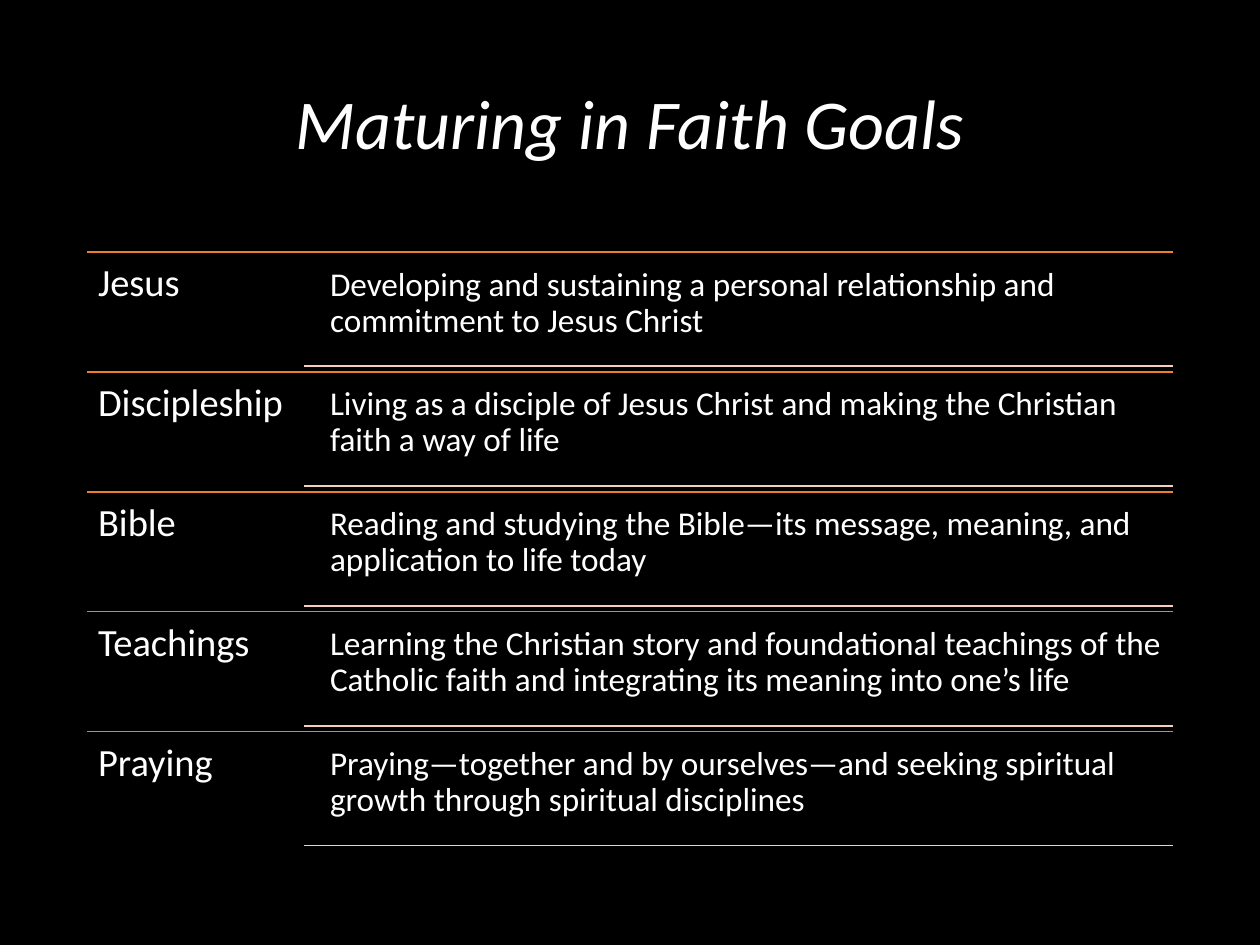
from lxml.etree import SubElement
from pptx import Presentation
from pptx.dml.color import RGBColor
from pptx.enum.shapes import MSO_CONNECTOR as Connector
from pptx.enum.text import MSO_ANCHOR as Anchor, PP_ALIGN as Align
from pptx.oxml.ns import qn
from pptx.util import Pt

COLORS = {"background": "000000", "text": "FFFFFF", "goal": "ED7D31", "detail": "F6CCBE"}
FONT = "Calibri"

LEFT, RIGHT = 49.5, 670.5
TOP, ROW_HEIGHT = 144, 68.5
GOAL_WIDTH = 124.2
DETAIL_LEFT, DETAIL_LINE_LEFT = 182.9, LEFT + GOAL_WIDTH
DETAIL_OFFSET, DETAIL_HEIGHT = 3.1, 62.1

GOALS = [
    ("Jesus", "Developing and sustaining a personal relationship and commitment to Jesus Christ"),
    ("Discipleship", "Living as a disciple of Jesus Christ and making the Christian faith a way of life"),
    ("Bible", "Reading and studying the Bible—its message, meaning, and application to life today"),
    ("Teachings", "Learning the Christian story and foundational teachings of the Catholic faith "
                  "and integrating its meaning into one’s life"),
    ("Praying", "Praying—together and by ourselves—and seeking spiritual growth "
                "through spiritual disciplines"),
]


def color(name):
    return RGBColor.from_string(COLORS[name])


def add_text(page, text, left, top, width, height, *, size, inset,
             italic=False, align=Align.LEFT, anchor=Anchor.TOP):
    box = page.shapes.add_textbox(Pt(left), Pt(top), Pt(width), Pt(height))
    frame = box.text_frame
    frame.word_wrap = True
    frame.vertical_anchor = anchor
    frame.margin_left = frame.margin_right = Pt(inset)
    frame.margin_top = frame.margin_bottom = Pt(inset)
    para = frame.paragraphs[0]
    para.alignment = align
    para.line_spacing = 0.9
    span = para.add_run()
    span.text = text
    span.font.name = FONT
    span.font.size = Pt(size)
    span.font.italic = italic
    span.font.color.rgb = color("text")


def add_rule(page, left, top, color_name):
    """Draw a horizontal line from left to the right margin."""
    rule = page.shapes.add_connector(Connector.STRAIGHT, Pt(left), Pt(top), Pt(RIGHT), Pt(top))
    rule.line.color.rgb = color(color_name)
    rule.line.width = Pt(1)
    SubElement(rule._element.spPr, qn("a:effectLst"))


def add_goal(page, top, goal, detail):
    detail_top = top + DETAIL_OFFSET
    add_rule(page, LEFT, top, "goal")
    add_text(page, goal, LEFT, top, GOAL_WIDTH, ROW_HEIGHT, size=22, inset=6.6)
    add_text(page, detail, DETAIL_LEFT, detail_top, RIGHT - DETAIL_LEFT, DETAIL_HEIGHT,
             size=19, inset=5.7)
    add_rule(page, DETAIL_LINE_LEFT, detail_top + DETAIL_HEIGHT, "detail")


def main():
    deck = Presentation()
    deck.slide_width, deck.slide_height = Pt(720), Pt(540)
    page = deck.slides.add_slide(deck.slide_layouts[6])
    page.background.fill.solid()
    page.background.fill.fore_color.rgb = color("background")

    add_text(page, "Maturing in Faith Goals", LEFT, 11.5, RIGHT - LEFT, 121.7,
             size=40, inset=3.6, italic=True, align=Align.CENTER, anchor=Anchor.MIDDLE)
    for row, (goal, detail) in enumerate(GOALS):
        add_goal(page, TOP + row * ROW_HEIGHT, goal, detail)

    deck.save("out.pptx")


if __name__ == "__main__":
    main()
